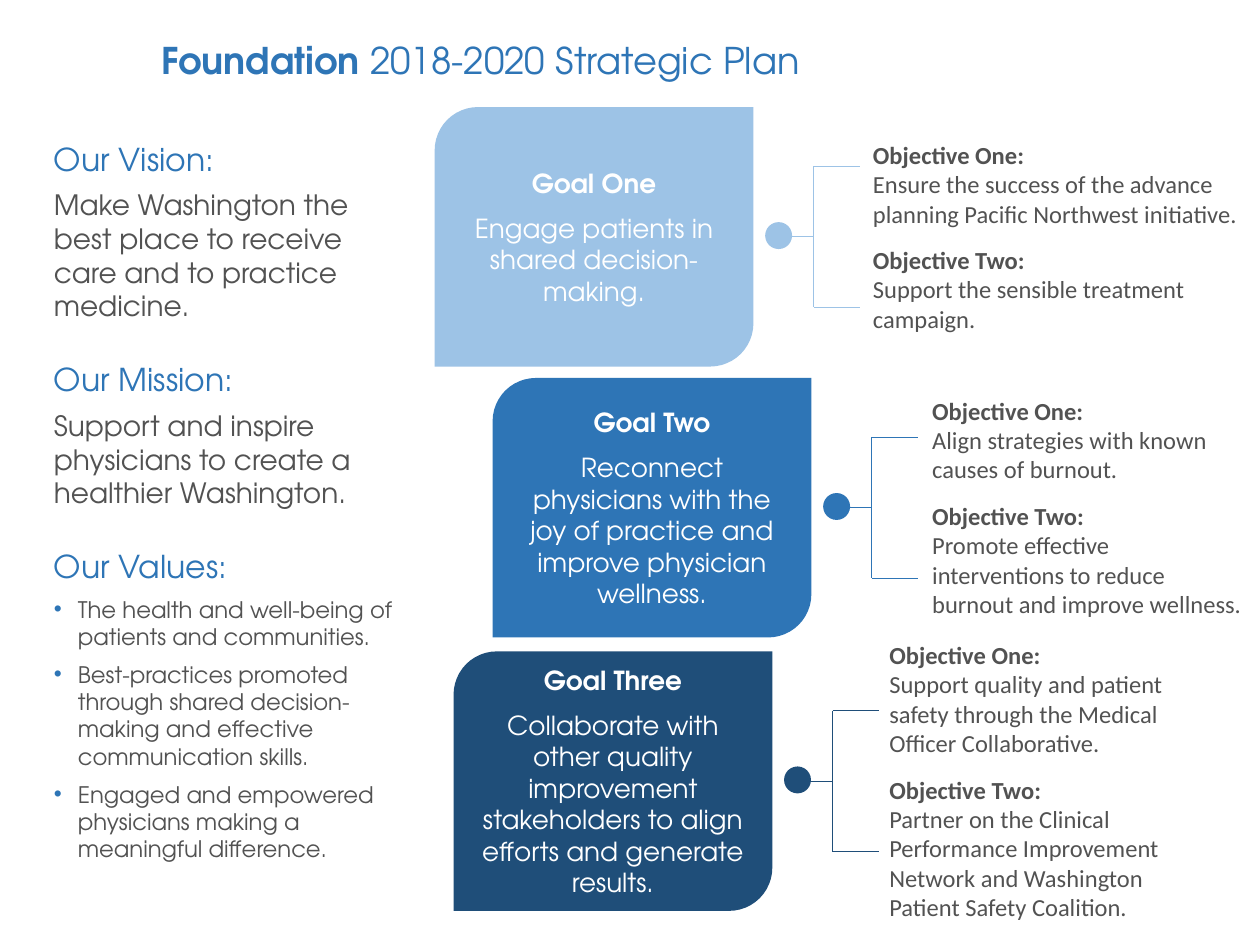
from lxml.etree import SubElement
from pptx import Presentation
from pptx.dml.color import RGBColor
from pptx.enum.shapes import MSO_CONNECTOR as LINE, MSO_SHAPE as SHAPE
from pptx.enum.text import MSO_ANCHOR as ANCHOR, MSO_AUTO_SIZE as FIT, PP_ALIGN as ALIGN
from pptx.oxml.ns import qn
from pptx.util import Inches, Pt

COLUMNS, ROWS = 100, 75
WIDTH, HEIGHT = Inches(10), Inches(7.5)
HEADING_FONT, BODY_FONT = "TeX Gyre Adventor", "Calibri"

LIGHT_BLUE = RGBColor(0x9D, 0xC3, 0xE6)
BLUE = RGBColor(0x2E, 0x75, 0xB6)
NAVY = RGBColor(0x1F, 0x4E, 0x79)
GREY = RGBColor(0x52, 0x52, 0x52)
WHITE = RGBColor(0xFF, 0xFF, 0xFF)

BELIEFS = [
    ("Our Vision:", "Make Washington the best place to receive care and to practice medicine."),
    ("Our Mission:", "Support and inspire physicians to create a healthier Washington."),
]
VALUES = [
    "The health and well-being of patients and communities.",
    "Best-practices promoted through shared decision-making and effective communication skills.",
    "Engaged and empowered physicians making a meaningful difference.",
]
# Name, aim, colour, card corner, objectives box (left, top, width, height), objectives
GOALS = [
    ("Goal One", "Engage patients in shared decision-making.",
     LIGHT_BLUE, (34.5, 8.5), (68.3, 10.6, 31.4, 16.5),
     ["Ensure the success of the advance planning Pacific Northwest initiative.",
      "Support the sensible treatment campaign."]),
    ("Goal Three", "Collaborate with other quality improvement stakeholders "
     "to align efforts and generate results.",
     NAVY, (36, 51.7), (69.6, 50.3, 26.3, 23.6),
     ["Support quality and patient safety through the Medical Officer Collaborative.",
      "Partner on the Clinical Performance Improvement Network and "
      "Washington Patient Safety Coalition."]),
    ("Goal Two", "Reconnect physicians with the joy of practice and "
     "improve physician wellness.",
     BLUE, (39.1, 30), (73, 30.9, 26.6, 18.8),
     ["Align strategies with known causes of burnout.",
      "Promote effective interventions to reduce burnout and improve wellness."]),
]


def write(frame, text, lead="", size=15, font=HEADING_FONT, color=GREY, bold=False,
          align=ALIGN.LEFT, before=0, after=0, bullet=None):
    """Add a paragraph; lead is a bold opening, bullet the colour of its mark."""
    first = not frame.paragraphs[0].runs
    paragraph = frame.paragraphs[0] if first else frame.add_paragraph()
    paragraph.alignment = align
    paragraph.space_after = Pt(after)
    if not first:
        paragraph.space_before = Pt(before)
    if bullet is not None:
        properties = paragraph._p.get_or_add_pPr()
        properties.set("marL", str(Inches(0.19)))
        properties.set("indent", str(-Inches(0.19)))
        mark_color = SubElement(properties, qn("a:buClr"))
        SubElement(mark_color, qn("a:srgbClr"), val=str(bullet))
        SubElement(properties, qn("a:buFont"), typeface="Arial")
        SubElement(properties, qn("a:buChar"), char="•")
    for part, is_bold in ((lead, True), (text, bold)):
        if part:
            run = paragraph.add_run()
            run.text = part
            run.font.name, run.font.size = font, Pt(size)
            run.font.bold = is_bold
            run.font.color.rgb = color


class PlanSlide:
    """Draws on one slide, with lengths in columns and rows of a 100 by 75 grid."""

    def __init__(self, slide):
        self.slide = slide
        self.layer = slide.shapes

    def start_group(self):
        self.layer = self.slide.shapes.add_group_shape().shapes

    def place(self, *lengths):
        """Turn alternating columns and rows into slide lengths."""
        units = (WIDTH / COLUMNS, HEIGHT / ROWS)
        return [round(length * units[i % 2]) for i, length in enumerate(lengths)]

    def text(self, *box, wrap=True):
        frame = self.layer.add_textbox(*self.place(*box)).text_frame
        frame.word_wrap = wrap
        frame.auto_size = FIT.SHAPE_TO_FIT_TEXT
        return frame

    def shape(self, kind, color, *box, outline=False):
        shape = self.layer.add_shape(kind, *self.place(*box))
        shape.shadow.inherit = False
        shape.fill.solid()
        shape.fill.fore_color.rgb = color
        if outline:
            shape.line.color.rgb = color
            shape.line.width = Pt(1)
        else:
            shape.line.fill.background()
        return shape

    def line(self, color, *ends):
        line = self.layer.add_connector(LINE.STRAIGHT, *self.place(*ends))
        line.line.color.rgb = color
        line.line.width = Pt(0.5)
        SubElement(line._element.spPr, qn("a:effectLst"))

    def card(self, name, aim, color, left, top):
        card = self.shape(SHAPE.ROUND_2_DIAG_RECTANGLE, color, left, top, 25.3, 20.6)
        frame = card.text_frame
        frame.word_wrap = True
        frame.vertical_anchor = ANCHOR.MIDDLE
        write(frame, name, color=WHITE, bold=True, align=ALIGN.CENTER)
        write(frame, aim, color=WHITE, align=ALIGN.CENTER, before=7.5)

    def bracket(self, color, left, top):
        """Link the card at left, top to its two objectives."""
        spine, arm = left + 30.1, 3.65
        upper, middle, lower = top + 4.7, top + 10.3, top + 15.9
        self.line(color, spine, upper, spine, lower)
        for level in (upper, lower):
            self.line(color, spine, level, spine + arm, level)
        self.line(color, spine - arm, middle, spine, middle)
        self.shape(SHAPE.OVAL, color, left + 26.3, top + 9.2, 2, 2, outline=True)

    def objectives(self, aims, *box):
        frame = self.text(*box)
        for number, aim in zip(("One", "Two"), aims):
            write(frame, f"Objective {number}:", size=14, font=BODY_FONT, bold=True, before=9.75)
            write(frame, aim, size=14, font=BODY_FONT)

    def beliefs(self):
        frame = self.text(3.3, 10.6, 29.3, 66)
        heading = dict(size=18, color=BLUE, before=21.6, after=6)
        for title, statement in BELIEFS:
            write(frame, title, **heading)
            write(frame, statement, size=16)
        write(frame, "Our Values:", **heading)
        for value in VALUES:
            write(frame, value, size=13, after=6, bullet=BLUE)


def main():
    deck = Presentation()
    deck.slide_width, deck.slide_height = WIDTH, HEIGHT
    plan = PlanSlide(deck.slides.add_slide(deck.slide_layouts[6]))
    title = plan.text(11.8, 2.5, 53.4, 4.5, wrap=False)
    write(title, "2018-2020 Strategic Plan", lead="Foundation ", size=21, color=BLUE)
    plan.beliefs()
    for name, aim, color, corner, box, aims in GOALS:
        plan.start_group()
        plan.card(name, aim, color, *corner)
        plan.bracket(color, *corner)
        plan.objectives(aims, *box)
    deck.save("out.pptx")


if __name__ == "__main__":
    main()
